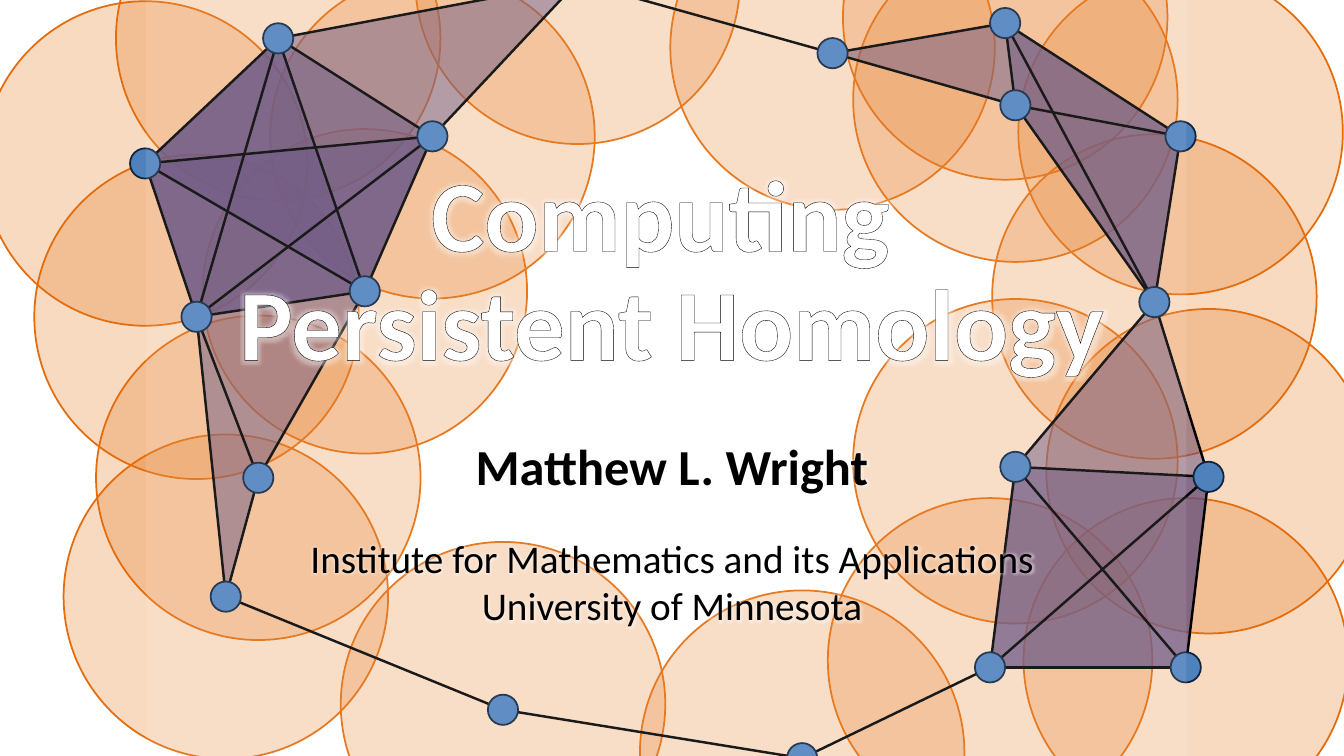
from dataclasses import dataclass

from lxml.etree import SubElement
from pptx import Presentation
from pptx.dml.color import RGBColor
from pptx.enum.shapes import MSO_CONNECTOR as Connector, MSO_SHAPE as Preset
from pptx.enum.text import MSO_ANCHOR as Anchor, PP_ALIGN as Align
from pptx.oxml import parse_xml
from pptx.oxml.ns import nsdecls, qn
from pptx.util import Pt

ORANGE = RGBColor(0xE4, 0x6C, 0x0A)
PURPLE = RGBColor(0x60, 0x4A, 0x7B)
BLUE = RGBColor(0x4F, 0x81, 0xBD)
NAVY = RGBColor(0x0F, 0x24, 0x3E)
BLACK = RGBColor(0, 0, 0)
WHITE = RGBColor(0xFF, 0xFF, 0xFF)
FONT = "Calibri"
DISC_SIZE, DOT_SIZE = 231.8, 21.6


@dataclass(frozen=True)
class Vertex:
    x: float
    y: float
    disc_lift: float = 0
    dot: bool = True


@dataclass(frozen=True)
class Caption:
    lines: tuple[str, ...]
    left: float
    top: float
    width: float
    height: float
    size: float
    color: RGBColor = BLACK
    bold: bool = False
    spacing: float = 1.0
    anchor: Anchor = Anchor.TOP
    outline: bool = False


# Points of the complex, clockwise from the upper left
VERTICES = {
    "top": Vertex(198.7, 27.4),
    "north": Vertex(412.6, -13, dot=False),
    "n_left": Vertex(594.7, 38, 4),
    "n_right": Vertex(718, 16.5, 4),
    "n_mid": Vertex(725.3, 75.2, 4),
    "ne": Vertex(843.3, 97.4, 3),
    "east": Vertex(824.6, 215.8, 4),
    "e_left": Vertex(725.3, 333.5, 4),
    "e_right": Vertex(863.3, 340.6, 4),
    "se_right": Vertex(847, 476.7, 5),
    "se_left": Vertex(707.2, 476.7, 5),
    "bottom": Vertex(573, 541.6, 4),
    "bottom_left": Vertex(359.3, 507, 4),
    "low": Vertex(161.3, 426.2),
    "sw": Vertex(184.5, 341.3),
    "west": Vertex(140.4, 226.3),
    "inner_low": Vertex(260.6, 208.1),
    "inner_top": Vertex(308.9, 97.4),
    "nw": Vertex(103.7, 116.8),
}

FACES = (
    "east n_mid n_right ne", "inner_top top north", "inner_low west nw inner_top",
    "se_right se_left e_left e_right", "inner_low nw top inner_top",
    "inner_low west nw top", "low west sw", "inner_low nw top inner_top",
    "se_right se_left e_left e_right", "inner_low west nw", "east n_mid ne",
    "sw west inner_low", "e_right e_left east", "ne n_mid n_right",
    "n_mid n_left n_right",
)

# Each vertex with the neighbours it is joined to
EDGES = {
    "top": "north west inner_low inner_top nw",
    "north": "n_left inner_top",
    "n_right": "east ne n_left n_mid",
    "n_mid": "east n_left ne",
    "east": "ne e_left e_right",
    "e_left": "se_right se_left e_right",
    "e_right": "se_left se_right",
    "se_left": "se_right bottom",
    "bottom_left": "bottom low",
    "west": "inner_top low inner_low sw nw",
    "inner_low": "nw sw inner_top",
    "nw": "inner_top",
    "sw": "low",
}

CAPTIONS = (
    Caption(("Computing \vPersistent Homology",), 109.4, 88.6, 740.9, 187.9, 72,
            WHITE, True, 0.9, Anchor.BOTTOM, True),
    Caption(("Matthew L. Wright",), 120, 311.8, 720, 58.3, 36, bold=True, spacing=0.9),
    Caption(("Institute for Mathematics and its Applications",
             "University of Minnesota"), 120, 378, 720, 74.9, 28),
)


def paint(shape, color: RGBColor, opacity: int = 100) -> None:
    shape.shadow.inherit = False
    shape.fill.solid()
    shape.fill.fore_color.rgb = color
    if opacity < 100:
        tint = shape.fill._xPr.find(qn("a:solidFill"))[0]
        SubElement(tint, qn("a:alpha"), val=str(opacity * 1000))


def add_circle(page, x: float, y: float, size: float, color: RGBColor,
               line: RGBColor, opacity: int = 100) -> None:
    circle = page.shapes.add_shape(
        Preset.OVAL, Pt(x - size / 2), Pt(y - size / 2), Pt(size), Pt(size))
    paint(circle, color, opacity)
    circle.line.color.rgb = line
    circle.line.width = Pt(1.25)


def add_face(page, names: str) -> None:
    corners = [(Pt(VERTICES[name].x), Pt(VERTICES[name].y)) for name in names.split()]
    builder = page.shapes.build_freeform(*corners[0])
    builder.add_line_segments(corners[1:], close=True)
    face = builder.convert_to_shape()
    paint(face, PURPLE, 50)
    face.line.fill.background()


def add_edge(page, start: Vertex, end: Vertex) -> None:
    edge = page.shapes.add_connector(
        Connector.STRAIGHT, Pt(start.x), Pt(start.y), Pt(end.x), Pt(end.y))
    edge.line.color.rgb = BLACK
    edge.line.width = Pt(1.75)
    SubElement(edge._element.spPr, qn("a:effectLst"))


def add_caption(page, caption: Caption) -> None:
    box = page.shapes.add_textbox(
        Pt(caption.left), Pt(caption.top), Pt(caption.width), Pt(caption.height))
    frame = box.text_frame
    frame.word_wrap = True
    frame.vertical_anchor = caption.anchor
    for index, line in enumerate(caption.lines):
        para = frame.add_paragraph() if index else frame.paragraphs[0]
        para.text = line
        para.alignment = Align.CENTER
        para.line_spacing = caption.spacing
        font = para.font
        font.name, font.size, font.bold = FONT, Pt(caption.size), caption.bold
        font.color.rgb = caption.color
        if caption.outline:
            font._element.insert(0, parse_xml(
                f'<a:ln {nsdecls("a")} w="25400"><a:solidFill>'
                f'<a:srgbClr val="{BLACK}"/></a:solidFill></a:ln>'))
        # Soft white halo behind the letters
        font._element.find(qn("a:solidFill")).addnext(parse_xml(
            f'<a:effectLst {nsdecls("a")}><a:glow rad="63500"><a:srgbClr val="{WHITE}">'
            '<a:alpha val="40000"/></a:srgbClr></a:glow></a:effectLst>'))


def main() -> None:
    deck = Presentation()
    deck.slide_width, deck.slide_height = Pt(960), Pt(540)
    page = deck.slides.add_slide(deck.slide_layouts[6])

    # Discs, faces, edges and dots, from back to front
    for vertex in VERTICES.values():
        add_circle(page, vertex.x, vertex.y - vertex.disc_lift, DISC_SIZE,
                   ORANGE, ORANGE, 25)
    for names in FACES:
        add_face(page, names)
    for start, neighbours in EDGES.items():
        for end in neighbours.split():
            add_edge(page, VERTICES[start], VERTICES[end])
    for vertex in VERTICES.values():
        if vertex.dot:
            add_circle(page, vertex.x, vertex.y, DOT_SIZE, BLUE, NAVY)

    # Pale veil under the text
    veil = page.shapes.add_shape(Preset.RECTANGLE, Pt(104.4), Pt(-13), Pt(743), Pt(566))
    paint(veil, WHITE, 10)
    veil.line.fill.background()

    for caption in CAPTIONS:
        add_caption(page, caption)
    deck.save("out.pptx")


if __name__ == "__main__":
    main()
